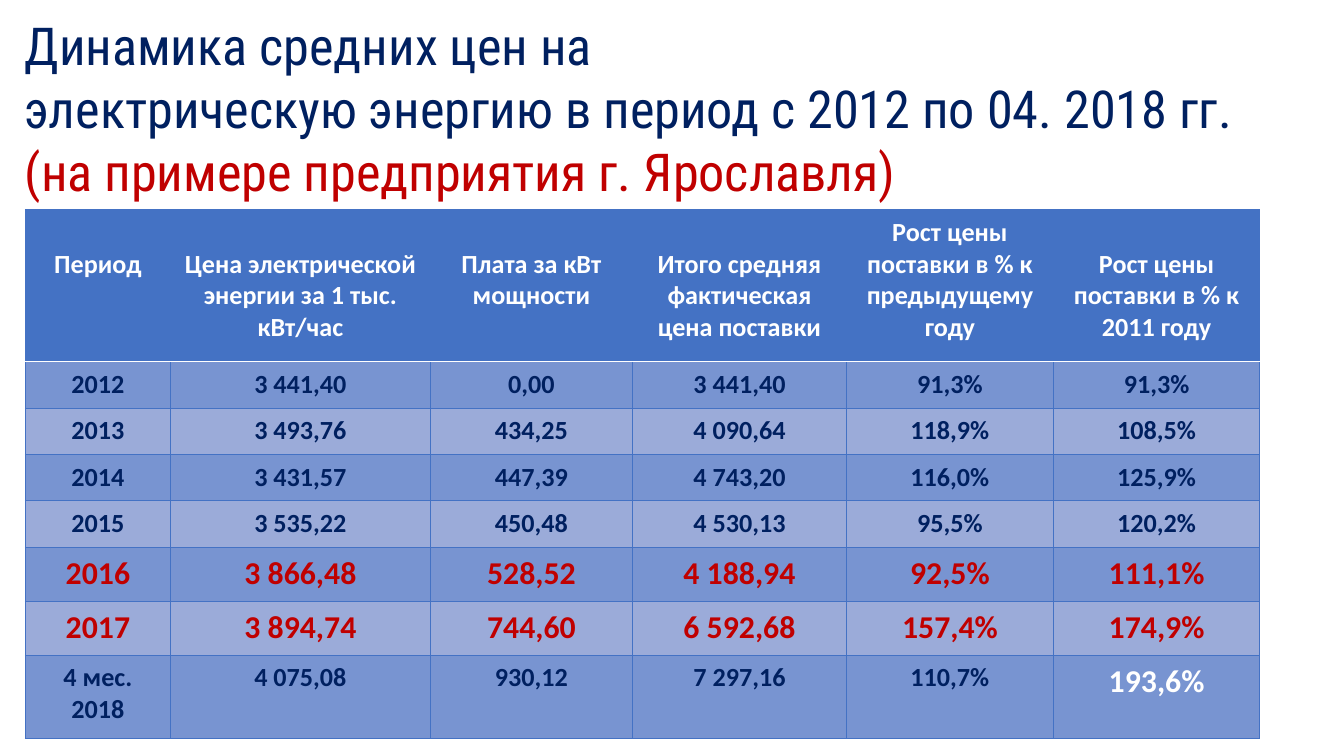
"""Build a slide with a table of average electricity prices for 2012–2018."""
from lxml import etree
from pptx import Presentation
from pptx import util as u
from pptx.dml.color import RGBColor
from pptx.enum import text
from pptx.oxml.ns import qn

NAVY, RED, WHITE, BLUE = "002060", "C00000", "FFFFFF", "4472C4"
BANDS = ("7894D1", "9BABD9")

TITLE = [
    ("Динамика средних цен на", NAVY),
    ("электрическую энергию в период с 2012 по 04. 2018 гг.", NAVY),
    ("(на примере предприятия г. Ярославля)", RED),
]
HEADINGS = [
    "Период",
    "Цена электрической энергии за 1 тыс. кВт/час",
    "Плата за кВт мощности",
    "Итого средняя фактическая цена поставки",
    "Рост цены поставки в % к предыдущему году",
    "Рост цены поставки в % к 2011 году",
]
PRICES = [
    ["2012", "3 441,40", "0,00", "3 441,40", "91,3%", "91,3%"],
    ["2013", "3 493,76", "434,25", "4 090,64", "118,9%", "108,5%"],
    ["2014", "3 431,57", "447,39", "4 743,20", "116,0%", "125,9%"],
    ["2015", "3 535,22", "450,48", "4 530,13", "95,5%", "120,2%"],
    ["2016", "3 866,48", "528,52", "4 188,94", "92,5%", "111,1%"],
    ["2017", "3 894,74", "744,60", "6 592,68", "157,4%", "174,9%"],
    ["4 мес. 2018", "4 075,08", "930,12", "7 297,16", "110,7%", "193,6%"],
]
WIDTHS = [78, 139, 108.5, 114.5, 111, 110.5]
HEIGHTS = [81.4] + [24.9] * 4 + [28.9] * 2 + [44.4]


def rgb(value):
    """Turn a hex string into a colour."""
    return RGBColor.from_string(value)


def write(para, words, *, font, size, color, bold=False, align=text.PP_ALIGN.LEFT):
    """Add one formatted span to a paragraph."""
    para.alignment = align
    span = para.add_run()
    span.text = words
    span.font.name = font
    span.font.size = u.Pt(size)
    span.font.bold = bold
    span.font.color.rgb = rgb(color)


def value_format(row, column):
    """Choose the size and colour of a price cell."""
    if PRICES[row][0] in ("2016", "2017"):
        return {"size": 17, "color": RED}
    if (row, column) == (len(PRICES) - 1, len(HEADINGS) - 1):
        return {"size": 17, "color": WHITE}
    return {"size": 14, "color": NAVY}


class PriceSlide:
    """Hold the style and the current page."""

    title_font = "Roboto Condensed"
    table_font = "Calibri"

    def __init__(self, deck):
        """Add a page with a title placeholder."""
        self.page = deck.slides.add_slide(deck.slide_layouts[5])

    def title(self, lines, left, top, width, height):
        """Fill the title, one paragraph per coloured line."""
        box = self.page.shapes.title
        box.left, box.top, box.width, box.height = map(u.Pt, (left, top, width, height))
        frame = box.text_frame
        frame.word_wrap = True
        frame.auto_size = text.MSO_AUTO_SIZE.NONE
        frame.vertical_anchor = text.MSO_ANCHOR.TOP
        for index, (words, color) in enumerate(lines):
            para = frame.add_paragraph() if index else frame.paragraphs[0]
            write(para, words, font=self.title_font, size=28, color=color)

    def border(self, cell, edge, color, width):
        """Draw one edge of a cell."""
        line = etree.SubElement(cell._tc.get_or_add_tcPr(), qn(f"a:ln{edge}"), w=str(u.Pt(width)))
        fill = etree.SubElement(line, qn("a:solidFill"))
        etree.SubElement(fill, qn("a:srgbClr"), val=color)

    def cell(self, cell, words, fill, white_edge="", **style):
        """Format one cell with its borders, fill and text."""
        for edge in "LRTB":
            self.border(cell, edge, *((WHITE, 1) if edge == white_edge else (BLUE, 0.5)))
        cell.fill.solid()
        cell.fill.fore_color.rgb = rgb(fill)
        write(cell.text_frame.paragraphs[0], words, font=self.table_font, bold=True,
              align=text.PP_ALIGN.CENTER, **style)

    def table(self, left, top):
        """Place the price table."""
        frame = self.page.shapes.add_table(
            len(HEIGHTS), len(WIDTHS), u.Pt(left), u.Pt(top),
            u.Pt(sum(WIDTHS)), u.Pt(sum(HEIGHTS)))
        table = frame.table
        for column, width in zip(table.columns, WIDTHS):
            column.width = u.Pt(width)
        for row, height in zip(table.rows, HEIGHTS):
            row.height = u.Pt(height)
        for column, heading in enumerate(HEADINGS):
            cell = table.cell(0, column)
            self.cell(cell, heading, BLUE, "B", size=14, color=WHITE)
            if "предыдущему" not in heading:
                cell.margin_top = u.Pt(20.7)
        for row, values in enumerate(PRICES):
            for column, value in enumerate(values):
                self.cell(table.cell(row + 1, column), value, BANDS[row % 2],
                          "" if row else "T", **value_format(row, column))


def main():
    """Build and save the deck."""
    deck = Presentation()
    deck.slide_width, deck.slide_height = u.Pt(720), u.Pt(405)
    slide = PriceSlide(deck)
    slide.title(TITLE, 6, 3.5, 704, 109)
    slide.table(13.5, 112.3)
    deck.save("out.pptx")


if __name__ == "__main__":
    main()
